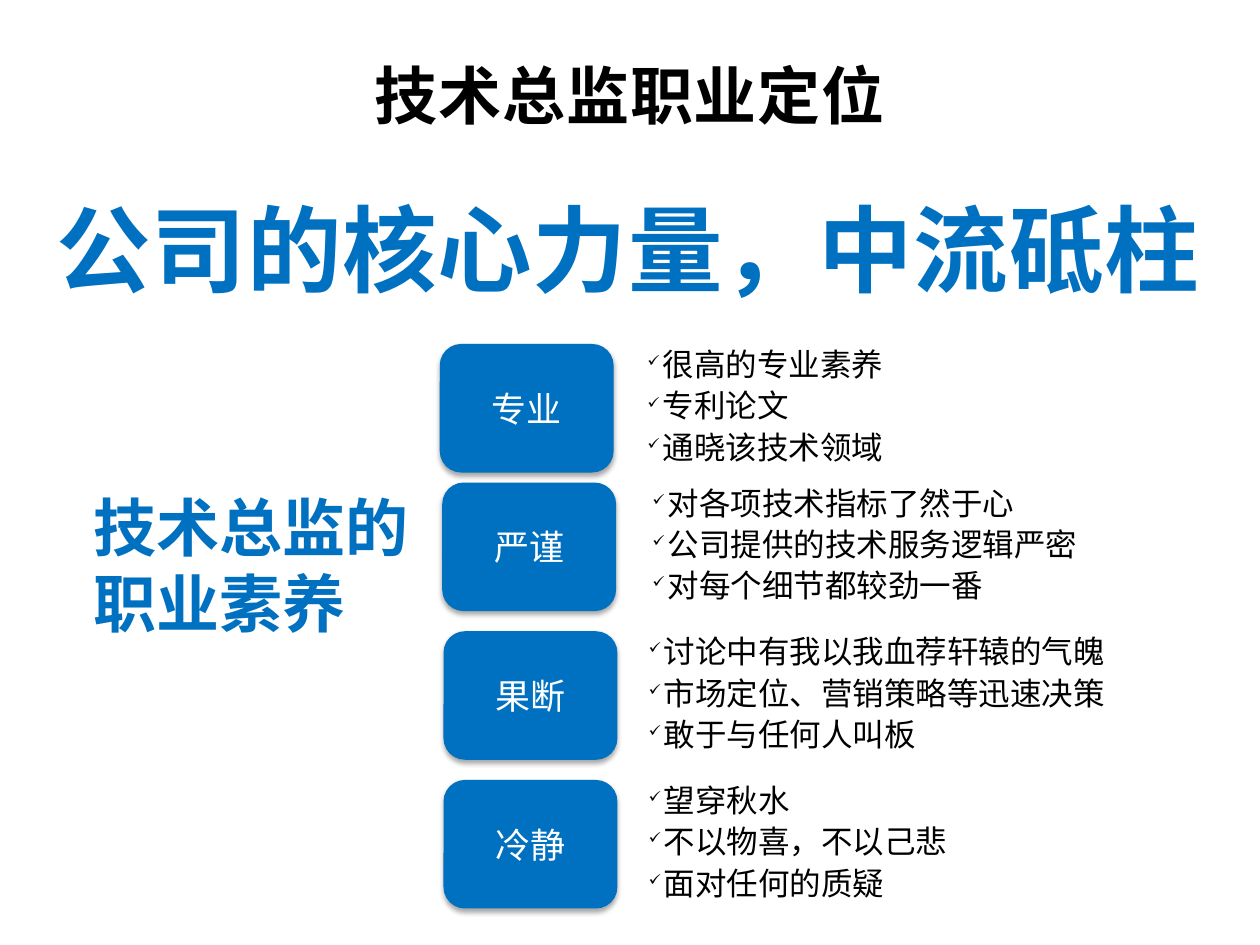
from dataclasses import dataclass
from typing import Any

from lxml import etree
from pptx import Presentation
from pptx import util as u
from pptx.dml.color import RGBColor
from pptx.enum import shapes, text
from pptx.oxml import ns

WIDTH, HEIGHT = u.Inches(10), u.Inches(7.5)
COLUMNS, ROWS = 100, 75


@dataclass(frozen=True)
class Theme:
    """Colours, fonts and type sizes of the slide."""

    blue: str = "0070C0"
    ink: str = "000000"
    paper: str = "FFFFFF"
    heading_font: str = "Noto Sans CJK SC"
    body_font: str = "Calibri"
    slogan: int = 54
    heading: int = 36
    tile: int = 20
    body: int = 18


@dataclass(frozen=True)
class Area:
    """A rectangle in grid columns and rows."""

    column: float
    row: float
    columns: float
    rows: float

    def lengths(self) -> tuple[int, int, int, int]:
        """Return left, top, width and height in slide units."""
        across, down = WIDTH / COLUMNS, HEIGHT / ROWS
        return (round(self.column * across), round(self.row * down),
                round(self.columns * across), round(self.rows * down))


@dataclass(frozen=True)
class Trait:
    """A quality of the director with the points that explain it."""

    name: str
    tile_column: float
    points_column: float
    row: float
    points: tuple[str, ...]


THEME = Theme()
TRAITS = (
    Trait("专业", 34.9, 50.4, 27.3, ("很高的专业素养", "专利论文", "通晓该技术领域")),
    Trait("严谨", 35.1, 50.8, 38.3,
          ("对各项技术指标了然于心", "公司提供的技术服务逻辑严密", "对每个细节都较劲一番")),
    Trait("果断", 35.2, 50.5, 50.1,
          ("讨论中有我以我血荐轩辕的气魄", "市场定位、营销策略等迅速决策", "敢于与任何人叫板")),
    Trait("冷静", 35.2, 50.5, 61.9, ("望穿秋水", "不以物喜，不以己悲", "面对任何的质疑")),
)


def add_element(parent: Any, tag: str, **attributes: str) -> Any:
    """Append a drawing element with its attributes."""
    return etree.SubElement(parent, ns.qn(tag), attributes)


def set_type(paragraph: Any, size: int, color: str, face: str,
             bold: bool = False, tracking: int = 0) -> None:
    """Set the type of a paragraph for Latin and East Asian letters."""
    font = paragraph.font
    font.size, font.bold, font.name = u.Pt(size), bold, face
    font.color.rgb = RGBColor.from_string(color)
    properties = paragraph._p.pPr.find(ns.qn("a:defRPr"))
    add_element(properties, "a:ea", typeface=face)
    if tracking:
        properties.set("spc", str(tracking))


def add_frame(slide: Any, area: Area) -> Any:
    """Add a wrapping text box and return its text frame."""
    frame = slide.shapes.add_textbox(*area.lengths()).text_frame
    frame.word_wrap = True
    return frame


def add_heading(slide: Any, area: Area, words: str, size: int, color: str,
                tracking: int = 0) -> Any:
    """Add a bold heading and return its text frame."""
    frame = add_frame(slide, area)
    paragraph = frame.paragraphs[0]
    paragraph.text = words
    set_type(paragraph, size, color, THEME.heading_font, True, tracking)
    return frame


def add_tile(slide: Any, trait: Trait) -> None:
    """Add the rounded tile that names a trait."""
    area = Area(trait.tile_column, trait.row, 13.8, 10.2)
    tile = slide.shapes.add_shape(
        shapes.MSO_SHAPE.ROUNDED_RECTANGLE, *area.lengths())
    tile.fill.solid()
    tile.fill.fore_color.rgb = RGBColor.from_string(THEME.blue)
    tile.line.fill.background()
    tile.shadow.inherit = False
    effects = tile._element.spPr.find(ns.qn("a:effectLst"))
    shadow = add_element(effects, "a:outerShdw", blurRad=str(u.Pt(3.1)),
                         dist=str(u.Pt(1.8)), dir="5400000", rotWithShape="0")
    shade = add_element(shadow, "a:srgbClr", val=THEME.ink)
    add_element(shade, "a:alpha", val="35000")
    tile.text_frame.vertical_anchor = text.MSO_ANCHOR.MIDDLE
    paragraph = tile.text_frame.paragraphs[0]
    paragraph.text = trait.name
    paragraph.alignment = text.PP_ALIGN.CENTER
    set_type(paragraph, THEME.tile, THEME.paper, THEME.heading_font)


def add_points(slide: Any, trait: Trait) -> None:
    """Add the ticked points beside a tile."""
    frame = add_frame(slide, Area(trait.points_column, trait.row - 0.4, 42, 11))
    for index, point in enumerate(trait.points):
        paragraph = frame.add_paragraph() if index else frame.paragraphs[0]
        paragraph.text = point
        if index:
            paragraph.space_before = u.Pt(2)
        properties = paragraph._p.get_or_add_pPr()
        properties.set("marL", str(u.Inches(0.12)))
        properties.set("indent", str(u.Inches(-0.38)))
        add_element(properties, "a:buSzPct", val="50000")
        add_element(properties, "a:buChar", char="✓")
        set_type(paragraph, THEME.body, THEME.ink, THEME.body_font)


def main() -> None:
    """Build and save the slide."""
    deck = Presentation()
    deck.slide_width, deck.slide_height = WIDTH, HEIGHT
    slide = deck.slides.add_slide(deck.slide_layouts[6])
    title = add_heading(slide, Area(5, 0.4, 90, 12.5), "技术总监职业定位",
                        THEME.heading, THEME.ink, 50)
    title.vertical_anchor = text.MSO_ANCHOR.MIDDLE
    title.paragraphs[0].alignment = text.PP_ALIGN.CENTER
    title.paragraphs[0].line_spacing = u.Pt(55)
    add_heading(slide, Area(6.4, 38.3, 28.2, 13.1), "技术总监的职业素养",
                THEME.heading, THEME.blue)
    add_heading(slide, Area(3.5, 14.7, 94.5, 10.1), "公司的核心力量，中流砥柱",
                THEME.slogan, THEME.blue, 50)
    for trait in TRAITS:
        add_tile(slide, trait)
        add_points(slide, trait)
    deck.save("out.pptx")


if __name__ == "__main__":
    main()
